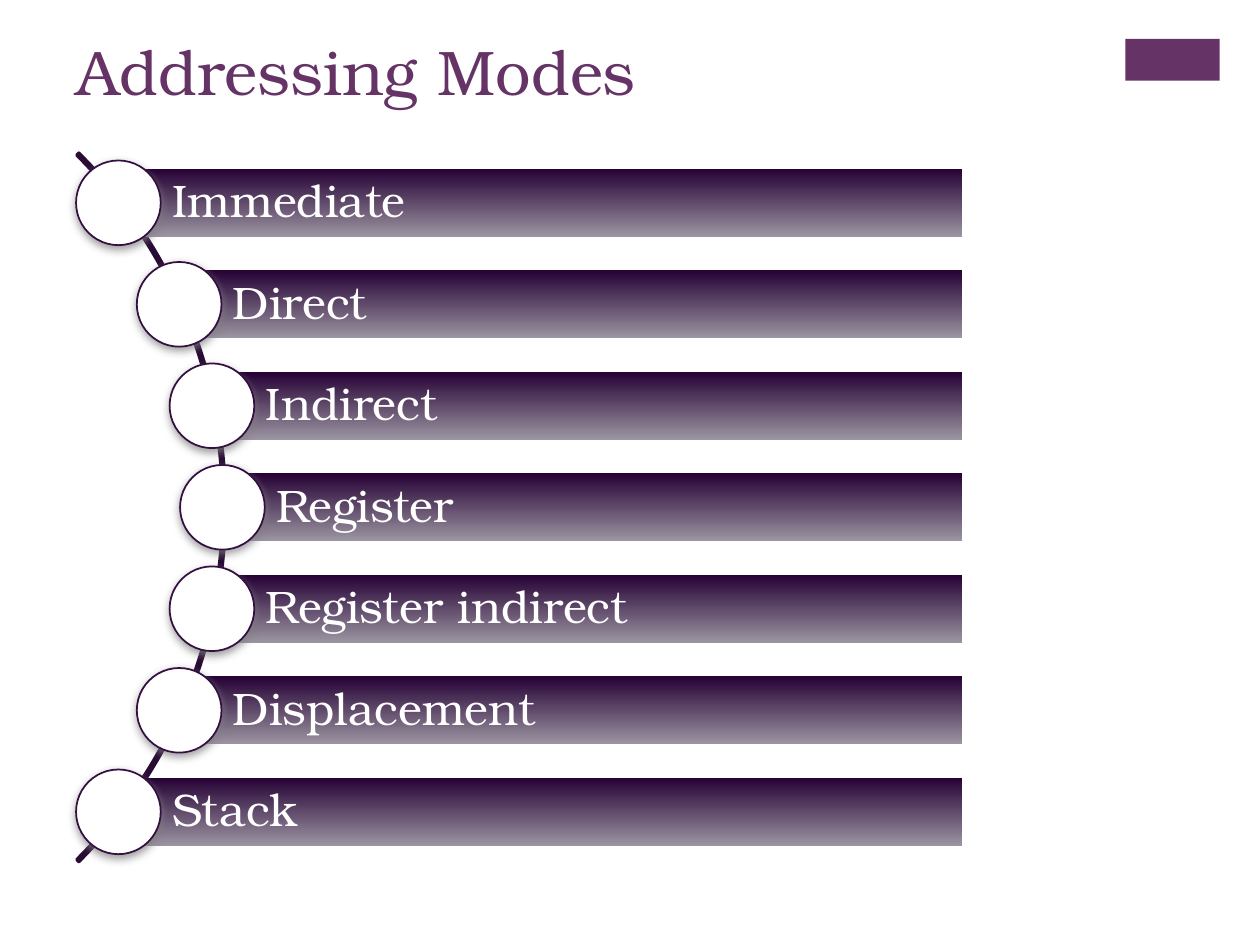
import math
from lxml import etree
from pptx import Presentation
from pptx.dml import color
from pptx.enum import shapes, text
from pptx.oxml import ns
from pptx.util import Pt

FONT = "TeX Gyre Bonum"


def rgb(value):
    return color.RGBColor.from_string(value)


def add_shape(kind, left, top, width, height):
    shape = page.shapes.add_shape(kind, Pt(left), Pt(top), Pt(width), Pt(height))
    shape.shadow.inherit = False
    return shape


deck = Presentation()
deck.slide_width, deck.slide_height = Pt(720), Pt(540)
page = deck.slides.add_slide(deck.slide_layouts[5])

# Corner accent
accent = add_shape(shapes.MSO_SHAPE.RECTANGLE, 643, 22.3, 54, 23.8)
accent.fill.solid()
accent.fill.fore_color.rgb = rgb("663366")
accent.line.fill.background()

# Title
title = page.shapes.title
title.left, title.top, title.width, title.height = Pt(36.7), Pt(15.1), Pt(594.7), Pt(87.8)
title.text_frame.text = "Addressing Modes"
title.text_frame.vertical_anchor = text.MSO_ANCHOR.TOP
para = title.text_frame.paragraphs[0]
para.alignment = text.PP_ALIGN.LEFT
para.font.name, para.font.size = FONT, Pt(36)
para.font.color.rgb = rgb("663366")

# Arc behind the list, from 315 to 45 degrees
center_x, center_y, arc_size = -157.3, 289.9, 572.4
arc = add_shape(shapes.MSO_SHAPE.BLOCK_ARC, center_x - arc_size / 2,
                center_y - arc_size / 2, arc_size, arc_size)
for index, value in enumerate((189, 27, 0.0027)):
    arc.adjustments[index] = value
arc.fill.background()
arc.line.color.rgb = rgb("290C35")
arc.line.width = Pt(2)

# Bars start on the arc, each with a disc centred on its left end
modes = ["Immediate", "Direct", "Indirect", "Register",
         "Register indirect", "Displacement", "Stack"]
radius, pitch, right = 284.4, 58, 549.8
bar_height, disc_size = 38.7, 48.4
for index, mode in enumerate(modes):
    offset = (index - len(modes) // 2) * pitch
    left = center_x + math.sqrt(radius ** 2 - offset ** 2)
    middle = center_y + offset

    bar = add_shape(shapes.MSO_SHAPE.RECTANGLE, left, middle - bar_height / 2,
                    right - left, bar_height)
    bar.fill.gradient()
    bar.fill.gradient_angle = 270
    for stop, shade in zip(bar.fill.gradient_stops, ("260235", "9B94A1")):
        stop.color.rgb = rgb(shade)
    bar.line.fill.background()
    frame = bar.text_frame
    frame.text = mode
    frame.word_wrap = True
    frame.vertical_anchor = text.MSO_ANCHOR.MIDDLE
    frame.margin_left = Pt(30.7)
    frame.margin_top = frame.margin_right = frame.margin_bottom = Pt(5)
    para = frame.paragraphs[0]
    para.alignment = text.PP_ALIGN.LEFT
    para.line_spacing = 0.9
    para.font.name, para.font.size = FONT, Pt(26)
    para.font.color.rgb = rgb("FFFFFF")

    disc = add_shape(shapes.MSO_SHAPE.OVAL, left - disc_size / 2,
                     middle - disc_size / 2, disc_size, disc_size)
    disc.fill.solid()
    disc.fill.fore_color.rgb = rgb("FFFFFF")
    disc.line.color.rgb = rgb("330F42")
    disc.line.width = Pt(1)

    # Soft shadow below the disc
    effects = disc.element.spPr.find(ns.qn("a:effectLst"))
    shadow = etree.SubElement(effects, ns.qn("a:outerShdw"), blurRad=str(Pt(5)),
                              dist=str(Pt(2)), dir="5400000", rotWithShape="0")
    tint = etree.SubElement(shadow, ns.qn("a:srgbClr"), val="808080")
    etree.SubElement(tint, ns.qn("a:alpha"), val="75000")

deck.save("out.pptx")
